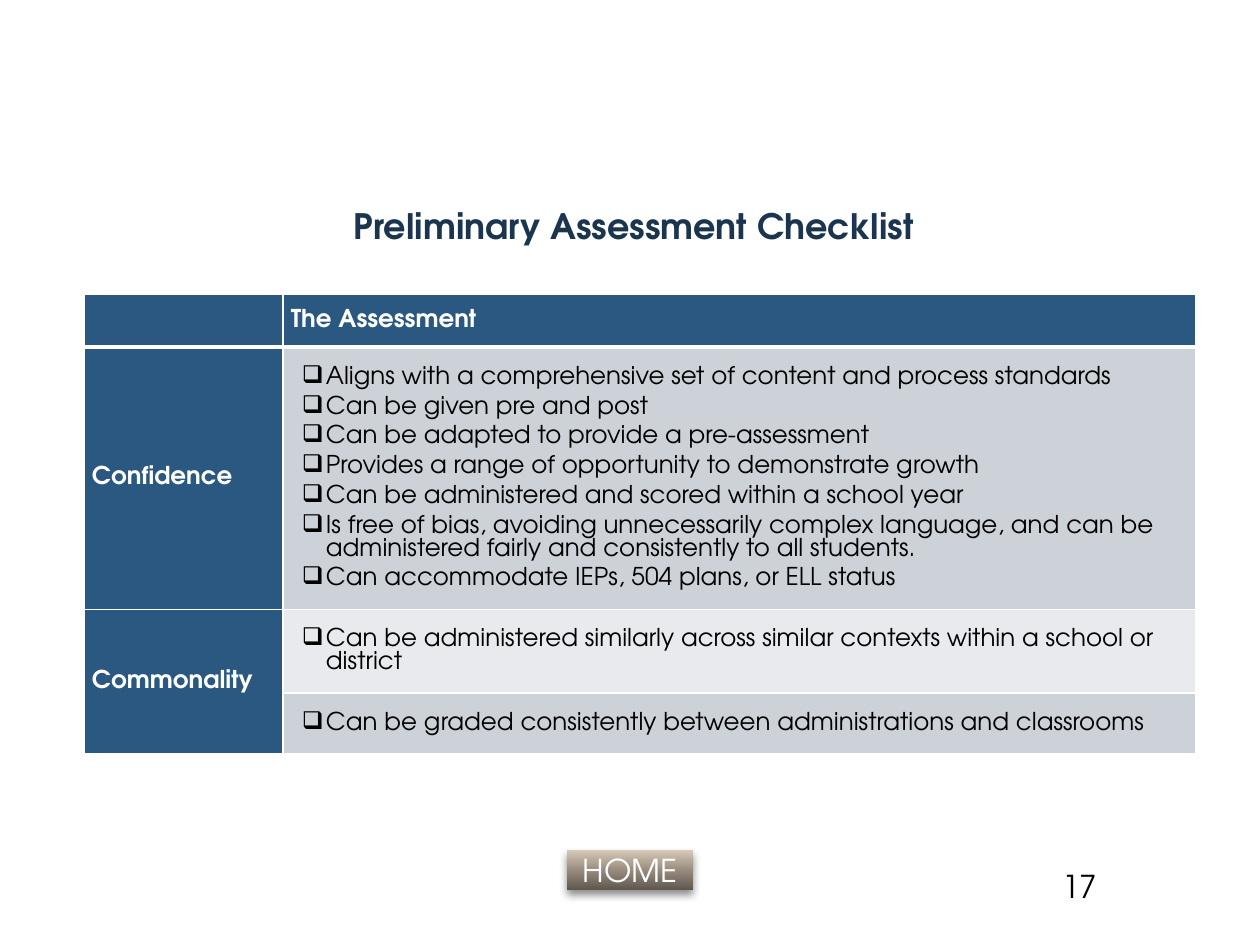
from lxml import etree
from pptx import Presentation
from pptx import util as u
from pptx.dml.color import RGBColor
from pptx.enum import shapes, text
from pptx.oxml import parse_xml
from pptx.oxml.ns import qn

SCALE = 914400 / 126
FONT = "TeX Gyre Adventor"
NS = 'xmlns:a="http://schemas.openxmlformats.org/drawingml/2006/main"'
COLORS = {
    "white": "FFFFFF", "black": "000000", "navy": "1A354D", "blue": "2B5880",
    "gray": "CDD1D8", "pale": "E8EAED",
}
STOPS = [(0, "5F574E"), (50, "988C7E"), (70, "B2A596"), (100, "D8CAB8")]
COLS = [199, 913]
ROWS = [53, 261, 83, 60]
CHECKS = [
    ("gray", [
        "Aligns with a comprehensive set of content and process standards",
        "Can be given pre and post",
        "Can be adapted to provide a pre-assessment",
        "Provides a range of opportunity to demonstrate growth",
        "Can be administered and scored within a school year",
        "Is free of bias, avoiding unnecessarily complex language, and can be "
        "administered fairly and consistently to all students.",
        "Can accommodate IEPs, 504 plans, or ELL status",
    ]),
    ("pale", ["Can be administered similarly across similar contexts within a school or district"]),
    ("gray", ["Can be graded consistently between administrations and classrooms"]),
]


def px(n):
    return u.Emu(round(n * SCALE))


def rgb(name):
    return RGBColor.from_string(COLORS[name])


def style(para, size, color, bold=False):
    for run in para.runs:
        font = run.font
        font.name, font.size, font.bold = FONT, u.Pt(size), bold
        font.color.rgb = rgb(color)


def add_text(slide, box, words, size, color, bold=False, align=None, anchor=None):
    frame = slide.shapes.add_textbox(*map(px, box)).text_frame
    frame.word_wrap = True
    frame.text = words
    frame.vertical_anchor = anchor
    para = frame.paragraphs[0]
    para.alignment = align
    style(para, size, color, bold)


def add_button(slide, box, words):
    kind = shapes.MSO_SHAPE.ACTION_BUTTON_CUSTOM
    shape = slide.shapes.add_shape(kind, *map(px, box))
    shape.line.fill.background()
    stops = "".join(
        f'<a:gs pos="{pos * 1000}"><a:srgbClr val="{color}"/></a:gs>' for pos, color in STOPS)
    grad = parse_xml(
        f'<a:gradFill {NS} rotWithShape="1"><a:gsLst>{stops}</a:gsLst>'
        '<a:lin ang="16200000" scaled="0"/></a:gradFill>')
    shade = parse_xml(
        f'<a:effectLst {NS}><a:outerShdw blurRad="{u.Pt(5)}" dist="{u.Pt(3)}" '
        'dir="5400000" rotWithShape="0"><a:srgbClr val="000000">'
        '<a:alpha val="45000"/></a:srgbClr></a:outerShdw></a:effectLst>')
    props = shape._element.spPr
    props.find(qn("a:prstGeom")).addnext(grad)
    props.append(shade)
    frame = shape.text_frame
    frame.text = words
    frame.vertical_anchor = text.MSO_ANCHOR.MIDDLE
    frame.paragraphs[0].alignment = text.PP_ALIGN.CENTER
    style(frame.paragraphs[0], 18, "white")


def set_edges(cell, low):
    props = cell._tc.get_or_add_tcPr()
    for spot, (side, width) in enumerate([("L", 1), ("R", 1), ("T", 1), ("B", low)]):
        props.insert(spot, parse_xml(
            f'<a:ln{side} {NS} w="{u.Pt(width)}"><a:solidFill>'
            f'<a:srgbClr val="{COLORS["white"]}"/></a:solidFill></a:ln{side}>'))


def fill_cell(cell, fill, lines, color="white", bold=True, check=False, low=1):
    cell.fill.solid()
    cell.fill.fore_color.rgb = rgb(fill)
    set_edges(cell, low)
    cell.vertical_anchor = text.MSO_ANCHOR.MIDDLE
    cell.margin_left = cell.margin_right = px(19 if check else 8)
    cell.margin_top = cell.margin_bottom = px(19 if check else 0)
    frame = cell.text_frame
    frame.text = "\n".join(lines)
    for spot, para in enumerate(frame.paragraphs):
        if check:
            props = para._p.get_or_add_pPr()
            props.set("marL", str(px(24)))
            props.set("indent", str(-px(24)))
            etree.SubElement(props, qn("a:buChar")).set("char", "❑")
            para.line_spacing = u.Pt(13)
        para.space_before = u.Pt(2 if spot else 0)
        para.space_after = u.Pt(2)
        para.font.size = u.Pt(14)
        style(para, 14, color, bold)


def add_list(slide, left, top):
    frame = slide.shapes.add_table(
        len(ROWS), len(COLS), px(left), px(top), px(sum(COLS)), px(sum(ROWS)))
    table = frame.table
    table.first_row = table.horz_banding = False
    for col, width in zip(table.columns, COLS):
        col.width = px(width)
    for row, height in zip(table.rows, ROWS):
        row.height = px(height)
    table.cell(2, 0).merge(table.cell(3, 0))
    fill_cell(table.cell(0, 0), "blue", [], low=3)
    fill_cell(table.cell(0, 1), "blue", ["The Assessment"], low=3)
    for row, label in enumerate(["Confidence", "Commonality"], 1):
        fill_cell(table.cell(row, 0), "blue", [label])
    for row, (fill, lines) in enumerate(CHECKS, 1):
        fill_cell(table.cell(row, 1), fill, lines, "black", False, True)


def main():
    deck = Presentation()
    deck.slide_width, deck.slide_height = px(1260), px(945)
    slide = deck.slides.add_slide(deck.slide_layouts[6])
    add_button(slide, (567, 850, 126, 40), "HOME")
    add_text(slide, (4, 168, 1260, 116), "Preliminary Assessment Checklist", 20, "navy",
             True, text.PP_ALIGN.CENTER, text.MSO_ANCHOR.MIDDLE)
    add_list(slide, 84, 294)
    add_text(slide, (1050, 861, 147, 66), "17", 18, "black")
    deck.save("out.pptx")


if __name__ == "__main__":
    main()
